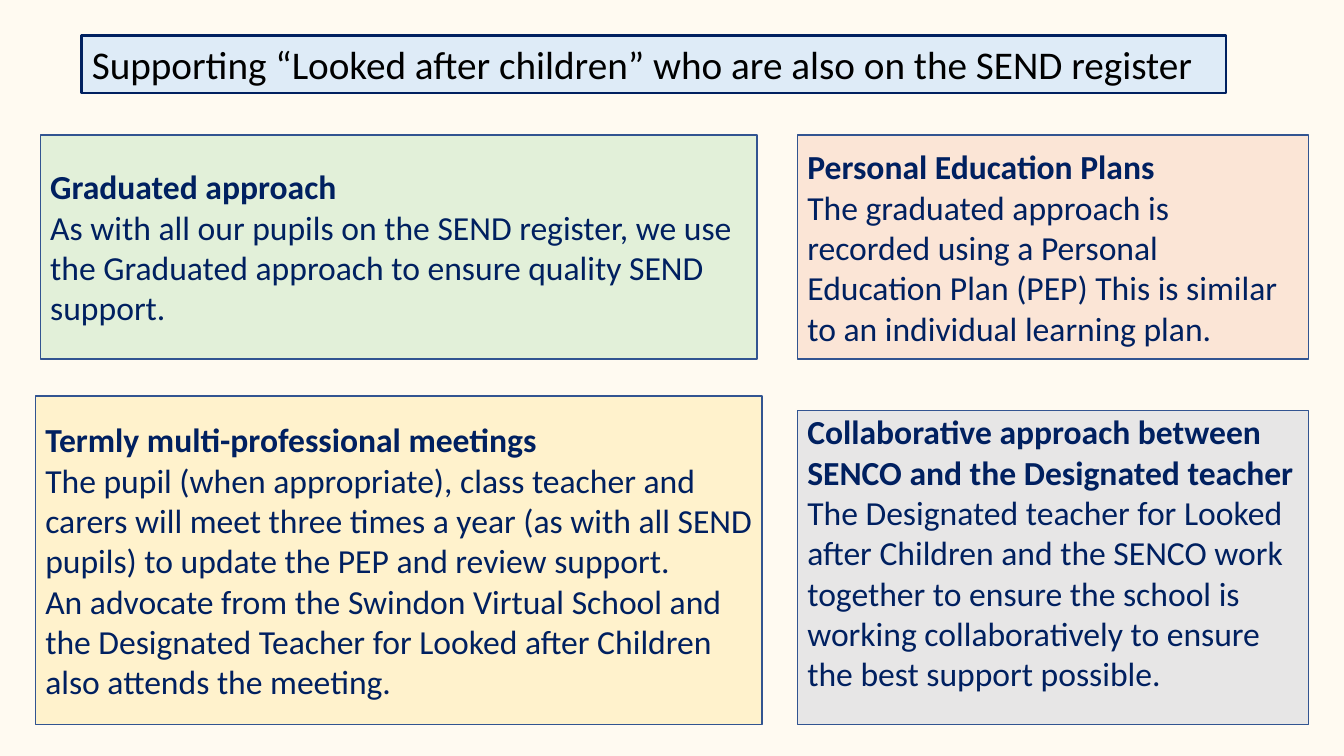
from dataclasses import dataclass

from pptx import Presentation
from pptx.dml.color import RGBColor
from pptx.enum.shapes import MSO_SHAPE
from pptx.enum.text import MSO_ANCHOR as ANCHOR, MSO_AUTO_SIZE as AUTO_SIZE, PP_ALIGN as ALIGN
from pptx.util import Inches, Pt


@dataclass(frozen=True)
class Theme:
    font: str = "Calibri"
    title_size: float = 28
    body_size: float = 24
    background: str = "FFFAF1"
    title_ink: str = "000000"
    navy: str = "002060"
    border: str = "325491"
    blue: str = "DEEBF7"
    green: str = "E2F0D9"
    peach: str = "FBE5D6"
    yellow: str = "FFF2CC"
    grey: str = "E7E6E6"


THEME = Theme()
SLIDE_WIDTH, SLIDE_HEIGHT = Inches(13.333), Inches(7.5)

# Percent of the slide: columns are (left, width), rows are (top, height).
TITLE_COLUMN, TITLE_ROW = (6.08, 85.13), (4.67, 7.6)
LEFT_COLUMN, RIGHT_COLUMN = (3, 53.33), (59.33, 38.03)
WIDE_LEFT_COLUMN = (2.63, 54.08)
TOP_ROW = (17.87, 29.6)
BOTTOM_ROW, SHORT_BOTTOM_ROW = (52.4, 43.47), (54.27, 41.6)


def grid_box(column, row):
    """Return left, top, width and height in EMU."""
    (left, width), (top, height) = column, row
    return (int(SLIDE_WIDTH * left / 100), int(SLIDE_HEIGHT * top / 100),
            int(SLIDE_WIDTH * width / 100), int(SLIDE_HEIGHT * height / 100))


def paint(item, fill, border, border_width):
    item.fill.solid()
    item.fill.fore_color.rgb = RGBColor.from_string(fill)
    item.line.color.rgb = RGBColor.from_string(border)
    item.line.width = Pt(border_width)


def write(paragraph, text, *, size, color, bold=False):
    paragraph.alignment = ALIGN.LEFT
    run = paragraph.add_run()
    run.text = text
    run.font.name = THEME.font
    run.font.size = Pt(size)
    run.font.bold = bold
    run.font.color.rgb = RGBColor.from_string(color)


def place_title(slide, text):
    title = slide.shapes.title
    title.left, title.top, title.width, title.height = grid_box(TITLE_COLUMN, TITLE_ROW)
    paint(title, THEME.blue, THEME.navy, 1.75)
    frame = title.text_frame
    frame.word_wrap = True
    frame.auto_size = AUTO_SIZE.NONE
    frame.vertical_anchor = ANCHOR.TOP
    write(frame.paragraphs[0], text, size=THEME.title_size, color=THEME.title_ink)


def add_card(slide, column, row, fill, heading, *body, anchor=ANCHOR.MIDDLE, top_inset=0.05):
    card = slide.shapes.add_shape(MSO_SHAPE.RECTANGLE, *grid_box(column, row))
    card.shadow.inherit = False
    paint(card, fill, THEME.border, 1)
    frame = card.text_frame
    frame.word_wrap = True
    frame.vertical_anchor = anchor
    frame.margin_top = Inches(top_inset)
    write(frame.paragraphs[0], heading, size=THEME.body_size, color=THEME.navy, bold=True)
    for text in body:
        write(frame.add_paragraph(), text, size=THEME.body_size, color=THEME.navy)


def main():
    deck = Presentation()
    deck.slide_width, deck.slide_height = SLIDE_WIDTH, SLIDE_HEIGHT
    slide = deck.slides.add_slide(deck.slide_layouts.get_by_name("Title Only"))
    slide.background.fill.solid()
    slide.background.fill.fore_color.rgb = RGBColor.from_string(THEME.background)

    place_title(slide, "Supporting “Looked after children” who are also on the SEND register")
    add_card(slide, LEFT_COLUMN, TOP_ROW, THEME.green, "Graduated approach",
             "As with all our pupils on the SEND register, we use the Graduated approach "
             "to ensure quality SEND support.")
    add_card(slide, RIGHT_COLUMN, TOP_ROW, THEME.peach, "Personal Education Plans",
             "The graduated approach is recorded using a Personal Education Plan (PEP) "
             "This is similar to an individual learning plan.")
    add_card(slide, WIDE_LEFT_COLUMN, BOTTOM_ROW, THEME.yellow,
             "Termly multi-professional meetings",
             "The pupil (when appropriate), class teacher and carers will meet three times "
             "a year (as with all SEND pupils) to update the PEP and review support.",
             "An advocate from the Swindon Virtual School and the Designated Teacher for "
             "Looked after Children also attends the meeting.")
    add_card(slide, RIGHT_COLUMN, SHORT_BOTTOM_ROW, THEME.grey,
             "Collaborative approach between SENCO and the Designated teacher",
             "The Designated teacher for Looked after Children and the SENCO work together "
             "to ensure the school is working collaboratively to ensure the best support "
             "possible.", anchor=ANCHOR.TOP, top_inset=0.01)
    deck.save("out.pptx")


if __name__ == "__main__":
    main()
